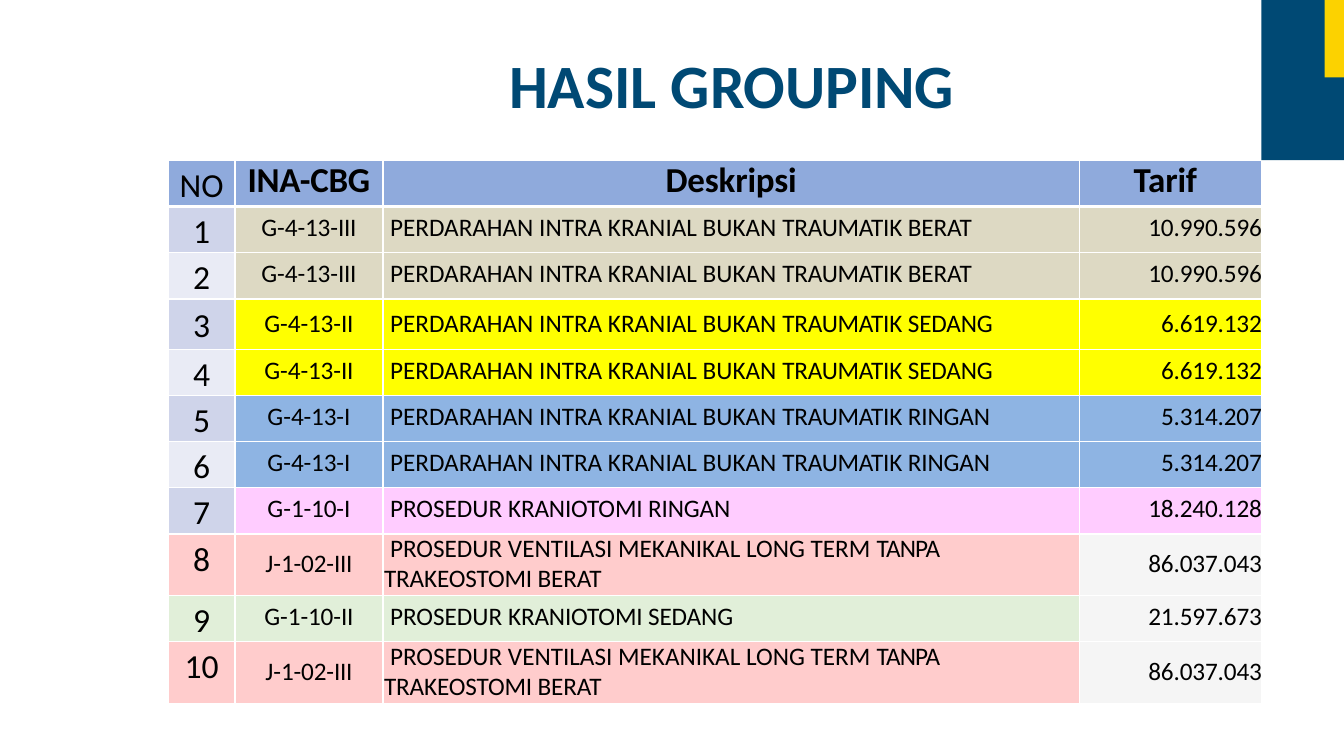
from dataclasses import dataclass

from lxml.etree import SubElement
from pptx import Presentation
from pptx.dml.color import RGBColor
from pptx.enum.shapes import MSO_SHAPE as Shape
from pptx.enum.text import MSO_ANCHOR as Anchor, MSO_AUTO_SIZE as AutoSize, PP_ALIGN as Align
from pptx.oxml.ns import qn
from pptx.util import Cm, Pt


@dataclass(frozen=True)
class Theme:
    font: str = "Calibri"
    navy: str = "004974"
    gold: str = "FCD200"
    black: str = "000000"
    white: str = "FFFFFF"
    header: str = "8FAADC"
    odd: str = "CFD4EA"
    even: str = "E9EBF5"
    sand: str = "DDD9C3"
    yellow: str = "FFFF00"
    blue: str = "8EB4E3"
    pink: str = "FFCCFF"
    rose: str = "FFCCCC"
    green: str = "E1EFD9"
    grey: str = "ECECEC"
    title_size: int = 44
    header_size: int = 25
    number_size: int = 24
    body_size: int = 18


class GroupingSlide:
    """Holds the theme and the current slide, and draws each kind of element."""

    def __init__(self, deck, theme):
        self.theme = theme
        self.slide = deck.slides.add_slide(deck.slide_layouts[5])

    def add_text(self, frame, runs, size, align=Align.LEFT, bold=False, color=None,
                 left=0, first=0, line=None):
        paragraph = frame.paragraphs[0]
        paragraph.alignment = align
        paragraph.space_before = Pt(0)
        if line:
            paragraph.line_spacing = Pt(line)
        properties = paragraph._p.get_or_add_pPr()
        properties.set("marL", str(Cm(left)))
        properties.set("indent", str(Cm(first)))
        for text, spacing in runs:
            run = paragraph.add_run()
            run.text = text
            run.font.name = self.theme.font
            run.font.size = Pt(size)
            run.font.bold = bold
            run.font.color.rgb = RGBColor.from_string(color or self.theme.black)
            run._r.get_or_add_rPr().set("spc", str(round(spacing * 100)))

    def title(self, runs):
        title = self.slide.shapes.title
        title.left, title.top, title.width, title.height = Cm(2.67), Cm(0.74), Cm(28.52), Cm(2.62)
        frame = title.text_frame
        frame.margin_left = frame.margin_right = frame.margin_bottom = 0
        frame.margin_top = Cm(0.44)
        frame.vertical_anchor = Anchor.TOP
        frame.auto_size = AutoSize.NONE
        self.add_text(frame, runs, self.theme.title_size, bold=True,
                      color=self.theme.navy, left=10.16)

    def block(self, left, width, height, color):
        block = self.slide.shapes.add_shape(Shape.RECTANGLE, Cm(left), 0, Cm(width), Cm(height))
        block.shadow.inherit = False
        block.fill.solid()
        block.fill.fore_color.rgb = RGBColor.from_string(color)
        block.line.fill.background()

    def table(self, left, top, widths, heights):
        frame = self.slide.shapes.add_table(len(heights), len(widths), Cm(left), Cm(top),
                                            Cm(sum(widths)), Cm(sum(heights)))
        table = frame.table
        table.horz_banding = False
        for column, width in zip(table.columns, widths):
            column.width = Cm(width)
        for row, height in zip(table.rows, heights):
            row.height = Cm(height)
        return table

    def cell(self, table, row, column, runs, size, fill, inset=0, alpha=None, **style):
        cell = table.cell(row, column)
        cell.margin_left = cell.margin_right = cell.margin_bottom = 0
        cell.margin_top = Cm(inset)
        cell.vertical_anchor = Anchor.TOP
        self.borders(cell, {"L": 1, "R": 1, "T": 3 if row == 1 else 1, "B": 3 if row == 0 else 1})
        cell.fill.solid()
        cell.fill.fore_color.rgb = RGBColor.from_string(fill)
        if alpha:
            color = cell._tc.tcPr.find(qn("a:solidFill")).find(qn("a:srgbClr"))
            SubElement(color, qn("a:alpha")).set("val", str(alpha * 1000))
        self.add_text(cell.text_frame, runs, size, **style)

    def borders(self, cell, weights):
        properties = cell._tc.get_or_add_tcPr()
        for side, weight in weights.items():
            line = SubElement(properties, qn(f"a:ln{side}"), w=str(Pt(weight)))
            paint = SubElement(line, qn("a:solidFill"))
            SubElement(paint, qn("a:srgbClr"), val=self.theme.white)


def bleeding(severity):
    return [("PERDARAHAN INTRA KRANIAL BUKAN ", 0), ("TRAUMATIK ", -0.2), (severity, -0.1)]


def craniotomy(severity):
    return [("PROSEDUR ", 0), ("KRANIOTOMI " + severity, -0.1)]


def main():
    theme = Theme()
    deck = Presentation()
    deck.slide_width, deck.slide_height = Cm(33.87), Cm(19.05)
    page = GroupingSlide(deck, theme)

    severe = (("G-", "4-13-", "III"), bleeding("BERAT"), "10.990.596", theme.sand)
    moderate = (("G-", "4-13-", "II"), bleeding("SEDANG"), "6.619.132", theme.yellow)
    mild = (("G-", "4-13-", "I"), bleeding("RINGAN"), "5.314.207", theme.blue)
    mild_surgery = (("G-", "1-10-", "I"), craniotomy("RINGAN"), "18.240.128", theme.pink)
    moderate_surgery = (("G-", "1-10-", "II"), craniotomy("SEDANG"), "21.597.673", theme.green)
    ventilation = (("J-", "1-02-", "III"),
                   [("PROSEDUR VENTILASI MEKANIKAL LONG TERM ", 0), ("TANPA ", -0.6),
                    ("TRAKEOSTOMI BERAT", -0.1)], "86.037.043", theme.rose)
    cases = [severe, severe, moderate, moderate, mild, mild, mild_surgery,
             ventilation, moderate_surgery, ventilation]

    normal, roomy, tall = 1.14, 1.27, 1.55
    heights = [normal] + [tall if case is ventilation else normal for case in cases]
    heights[3] = roomy
    table = page.table(4.24, 4.04, [1.68, 3.73, 17.55, 4.6], heights)

    page.cell(table, 0, 0, [("NO", 0)], theme.number_size, theme.header, 0.13, align=Align.CENTER)
    headings = [("INA-CBG", -0.2, Align.CENTER, 0), ("Deskripsi", -0.1, Align.CENTER, 0),
                ("Tarif", -0.1, Align.LEFT, 1.37)]
    for column, (heading, spacing, align, left) in enumerate(headings, 1):
        page.cell(table, 0, column, [(heading, spacing)], theme.header_size, theme.header,
                  align=align, bold=True, left=left, line=29.9)

    for number, (code, description, tariff, fill) in enumerate(cases, 1):
        height = heights[number]
        inset = {normal: 0.15, roomy: 0.23, tall: 0.36}[height]
        is_tall = height == tall
        plain = number > 7
        stripe = theme.odd if number % 2 else theme.even
        grade_spacing = -0.5 if code[-1] == "I" else -0.2
        page.cell(table, number, 0, [(str(number), 0)], theme.number_size,
                  fill if plain else stripe, 0.18 if height == roomy else 0.13,
                  align=Align.CENTER)
        page.cell(table, number, 1, zip(code, (0, -0.1, grade_spacing)), theme.body_size,
                  fill, inset, align=Align.CENTER)
        page.cell(table, number, 2, description, theme.body_size, fill,
                  0 if is_tall else inset, left=0.03, first=0.15,
                  line=21.6 if is_tall else None)
        page.cell(table, number, 3, [(tariff, -0.1)], theme.body_size,
                  theme.grey if plain else fill, inset, alpha=50 if plain else None,
                  align=Align.RIGHT)

    page.title([("HASIL ", 0), ("GROUPING", -0.1)])
    page.block(31.79, 2.08, 4.04, theme.navy)
    page.block(33.38, 0.49, 1.95, theme.gold)
    deck.save("out.pptx")


if __name__ == "__main__":
    main()
